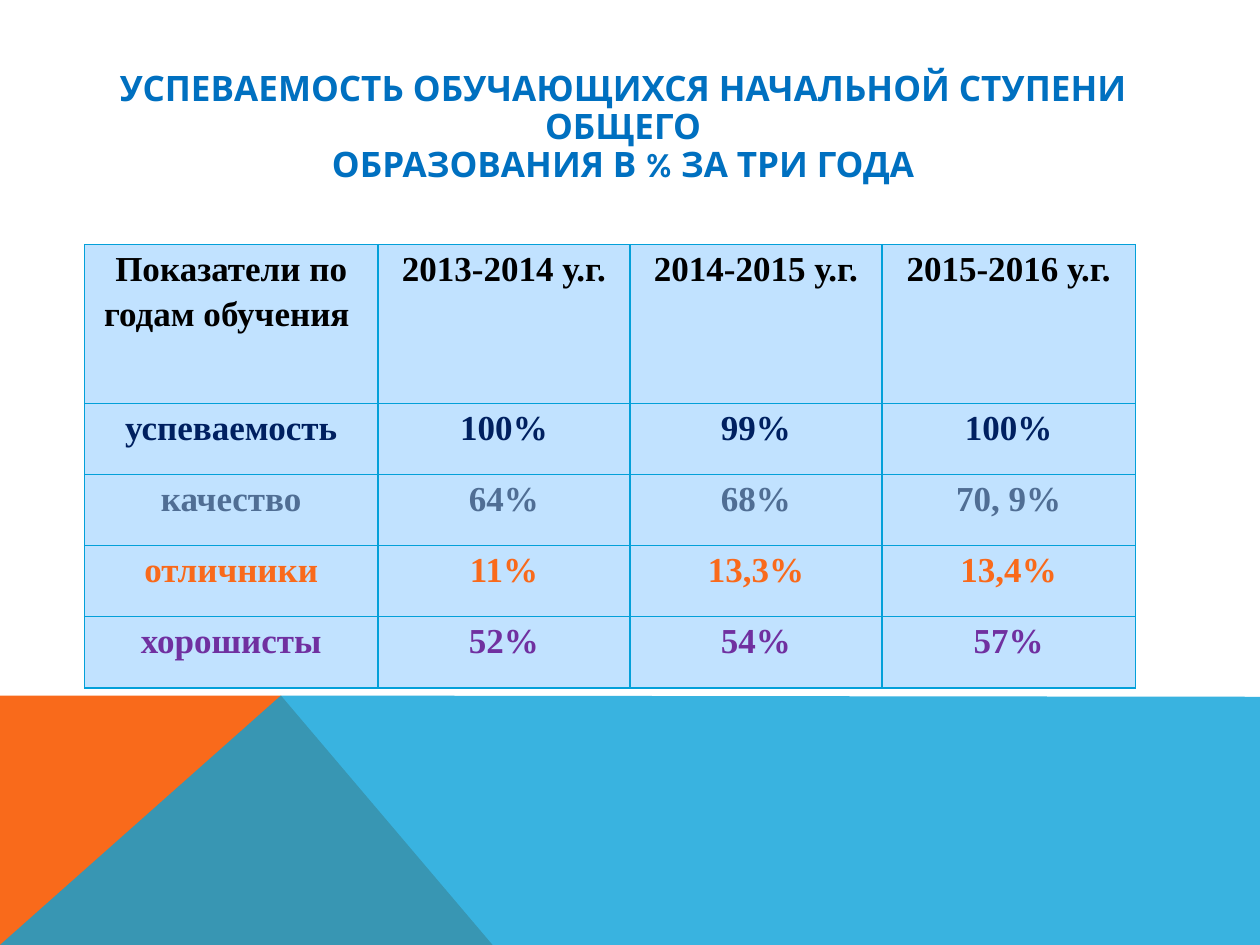
from lxml.etree import SubElement
from pptx import Presentation
from pptx.dml.color import RGBColor
from pptx.enum.text import MSO_ANCHOR, PP_ALIGN
from pptx.oxml.ns import qn
from pptx.util import Inches, Pt

ORANGE = RGBColor(0xF9, 0x6A, 0x1B)
BLUE = RGBColor(0x08, 0xA1, 0xD9)
TITLE_BLUE = RGBColor(0x00, 0x70, 0xC0)
BORDER_BLUE = RGBColor(0x03, 0xA0, 0xD9)
CELL_BLUE = RGBColor(0xC1, 0xE2, 0xFF)
BLACK = RGBColor(0x00, 0x00, 0x00)
NAVY = RGBColor(0x00, 0x20, 0x60)
SLATE = RGBColor(0x50, 0x6E, 0x94)
PURPLE = RGBColor(0x70, 0x30, 0xA0)


def write_text(frame, text, *, font, color, spacing, size=20):
    frame.word_wrap = True
    para = frame.paragraphs[0]
    para.text = text
    para.alignment = PP_ALIGN.CENTER
    para.line_spacing = spacing
    for span in para.runs:
        span.font.name = font
        span.font.size = Pt(size)
        span.font.bold = True
        span.font.color.rgb = color


def add_border(cell):
    properties = cell._tc.get_or_add_tcPr()
    for side in ("a:lnL", "a:lnR", "a:lnT", "a:lnB"):
        line = SubElement(properties, qn(side), w=str(Pt(0.75)))
        fill = SubElement(line, qn("a:solidFill"))
        SubElement(fill, qn("a:srgbClr"), val=str(BORDER_BLUE))


deck = Presentation()
deck.slide_width = Inches(10)
deck.slide_height = Inches(7.5)
page = deck.slides.add_slide(deck.slide_layouts[6])

bands = [
    ([(0, 7.5), (0, 5.52), (2.23, 5.52), (3.91, 7.5)], ORANGE, 100),
    ([(0, 7.5), (2.23, 5.52), (10, 5.53), (10, 7.5)], BLUE, 80),
]
for points, color, opacity in bands:
    corners = [(Inches(x), Inches(y)) for x, y in points]
    builder = page.shapes.build_freeform(*corners[0])
    builder.add_line_segments(corners[1:], close=True)
    band = builder.convert_to_shape()
    band.shadow.inherit = False
    band.fill.solid()
    band.fill.fore_color.rgb = color
    band.line.fill.background()
    if opacity < 100:
        shade = band._element.spPr.find(qn("a:solidFill")).find(qn("a:srgbClr"))
        SubElement(shade, qn("a:alpha"), val=str(opacity * 1000))

title = page.shapes.add_textbox(Inches(0.28), Inches(0.52), Inches(9.33), Inches(0.83))
title.text_frame.vertical_anchor = MSO_ANCHOR.TOP
write_text(
    title.text_frame,
    "УСПЕВАЕМОСТЬ ОБУЧАЮЩИХСЯ НАЧАЛЬНОЙ СТУПЕНИ ОБЩЕГО\vОБРАЗОВАНИЯ В % ЗА ТРИ ГОДА",
    font="Karla", color=TITLE_BLUE, spacing=0.9,
)

rows = [
    (BLACK, ["Показатели по годам обучения ", "2013-2014 у.г.", "2014-2015 у.г.", "2015-2016 у.г."]),
    (NAVY, ["успеваемость", "100%", "99%", "100%"]),
    (SLATE, ["качество", "64%", "68%", "70, 9%"]),
    (ORANGE, ["отличники", "11%", "13,3%", "13,4%"]),
    (PURPLE, ["хорошисты", "52%", "54%", "57%"]),
]
table = page.shapes.add_table(
    len(rows), 4, Inches(0.67), Inches(1.94), Inches(8.35), Inches(3.52)
).table
for column, width in zip(table.columns, [2.33, 2, 2, 2.01]):
    column.width = Inches(width)
for row, height in zip(table.rows, [1.26] + [0.565] * 4):
    row.height = Inches(height)
for row, (color, texts) in zip(table.rows, rows):
    for cell, text in zip(row.cells, texts):
        cell.margin_left = cell.margin_right = Inches(0.07)
        cell.margin_top = cell.margin_bottom = 0
        add_border(cell)
        cell.fill.solid()
        cell.fill.fore_color.rgb = CELL_BLUE
        write_text(cell.text_frame, text, font="Times New Roman", color=color, spacing=1.15)

deck.save("out.pptx")
